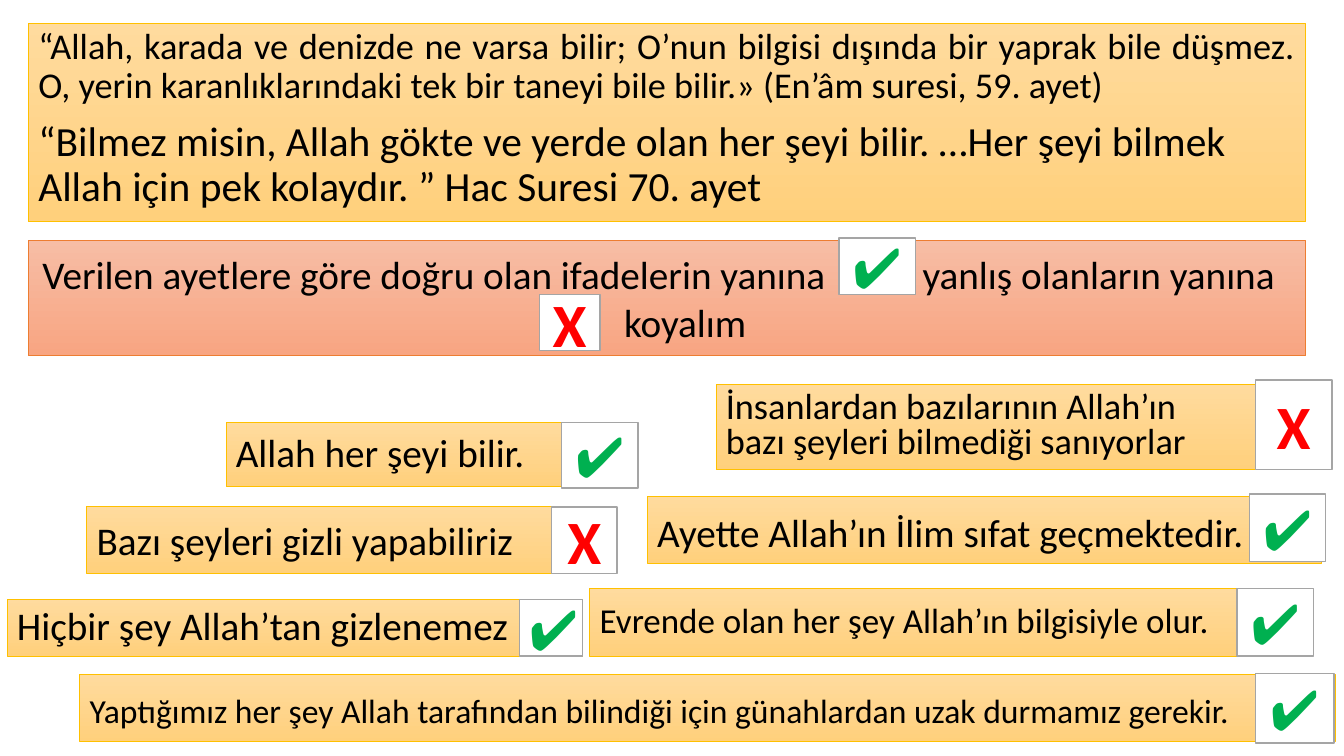
from dataclasses import dataclass

import pptx
import pptx.dml.color
import pptx.enum.shapes
import pptx.enum.text
import pptx.oxml.ns
import pptx.util
from lxml import etree

PX = 9144  # 100 px to the inch

RGB = pptx.dml.color.RGBColor
ALIGN = pptx.enum.text.PP_ALIGN
BLACK = RGB(0x00, 0x00, 0x00)
WHITE = RGB(0xFF, 0xFF, 0xFF)
GREY = RGB(0xA5, 0xA5, 0xA5)
GREEN = RGB(0x00, 0xB0, 0x50)
RED = RGB(0xFF, 0x00, 0x00)
GOLD = RGB(0xFF, 0xC0, 0x00)
GOLD_LIGHT = RGB(0xFF, 0xDB, 0x9E)
GOLD_DEEP = RGB(0xFF, 0xD0, 0x7C)
ORANGE = RGB(0xED, 0x7D, 0x31)
ORANGE_LIGHT = RGB(0xF7, 0xBD, 0xA5)
ORANGE_DEEP = RGB(0xF8, 0xA5, 0x82)


@dataclass(frozen=True)
class Box:
    left: int
    top: int
    width: int
    height: int


@dataclass(frozen=True)
class Mark:
    box: Box
    correct: bool


@dataclass(frozen=True)
class Statement:
    box: Box
    text: str
    size: float
    spacing: float
    mark: Mark


STATEMENTS = [
    Statement(Box(224, 419, 405, 64), "Allah her şeyi bilir.", 28, 0.9,
              Mark(Box(557, 419, 76, 65), True)),
    Statement(Box(710, 381, 608, 85),
              "İnsanlardan bazılarının Allah’ın\vbazı şeyleri bilmediği sanıyorlar", 25.9, 0.8,
              Mark(Box(1245, 377, 76, 89), False)),
    Statement(Box(7, 595, 571, 56), "Hiçbir şey Allah’tan gizlenemez", 28, 0.9,
              Mark(Box(515, 595, 63, 56), True)),
    Statement(Box(86, 502, 465, 67), "Bazı şeyleri gizli yapabiliriz", 28, 1.0,
              Mark(Box(547, 503, 65, 66), False)),
    Statement(Box(642, 492, 669, 67), "Ayette Allah’ın İlim sıfat geçmektedir.", 28, 1.1,
              Mark(Box(1239, 490, 76, 67), True)),
    Statement(Box(585, 584, 710, 67), "Evrende olan her şey Allah’ın bilgisiyle olur.", 25, 0.9,
              Mark(Box(1227, 584, 76, 67), True)),
    Statement(Box(79, 669, 1245, 67),
              "Yaptığımız her şey Allah tarafından bilindiği için günahlardan uzak durmamız gerekir.",
              24, 1.1, Mark(Box(1245, 668, 78, 69), True)),
]
INSTRUCTION_MARKS = [
    Mark(Box(832, 236, 76, 56), True),
    Mark(Box(535, 292, 60, 56), False),
]


def place(shape, box: Box) -> None:
    shape.left, shape.top = box.left * PX, box.top * PX
    shape.width, shape.height = box.width * PX, box.height * PX


def shade(shape, light: RGB, deep: RGB, outline: RGB) -> None:
    """Fill from light at the top to deep at the bottom, with a thin outline."""
    shape.fill.gradient()
    shape.fill.gradient_angle = 270
    for stop, color in zip(shape.fill.gradient_stops, (light, deep)):
        stop.color.rgb = color
    shape.line.color.rgb = outline
    shape.line.width = pptx.util.Pt(0.5)


def write(paragraph, text: str, size: float, color: RGB = BLACK, bold: bool = False,
          align: ALIGN = ALIGN.LEFT, spacing: float = 1.0, before: int = 0) -> None:
    paragraph.text = text
    paragraph.alignment = align
    paragraph.line_spacing = spacing
    paragraph.space_before = pptx.util.Pt(before)
    paragraph.font.name = "Calibri"
    paragraph.font.size = pptx.util.Pt(size)
    paragraph.font.bold = bold
    paragraph.font.color.rgb = color


def indent(paragraph, margin: int = 0) -> None:
    """Drop the bullet and set the left margin."""
    qn = pptx.oxml.ns.qn
    properties = paragraph.font._element.getparent()
    properties.set("marL", str(margin * PX))
    properties.set("indent", "0")
    properties.find(qn("a:defRPr")).addprevious(etree.Element(qn("a:buNone")))


def add_rectangle(slide, box: Box):
    rectangle = slide.shapes.add_shape(
        pptx.enum.shapes.MSO_SHAPE.RECTANGLE,
        box.left * PX, box.top * PX, box.width * PX, box.height * PX)
    rectangle.shadow.inherit = False
    rectangle.text_frame.word_wrap = True
    rectangle.text_frame.vertical_anchor = pptx.enum.text.MSO_ANCHOR.MIDDLE
    return rectangle


def add_mark(slide, mark: Mark) -> None:
    square = add_rectangle(slide, mark.box)
    square.fill.solid()
    square.fill.fore_color.rgb = WHITE
    square.line.color.rgb = GREY
    square.line.width = pptx.util.Pt(1)
    symbol, size, color = ("✔", 40, GREEN) if mark.correct else ("X", 44, RED)
    write(square.text_frame.paragraphs[0], symbol, size, color,
          bold=not mark.correct, align=ALIGN.CENTER)


def add_statement(slide, statement: Statement) -> None:
    panel = add_rectangle(slide, statement.box)
    shade(panel, GOLD_LIGHT, GOLD_DEEP, GOLD)
    write(panel.text_frame.paragraphs[0], statement.text, statement.size,
          spacing=statement.spacing, before=10)
    add_mark(slide, statement.mark)


def fill_verses(verses) -> None:
    place(verses, Box(28, 23, 1267, 197))
    shade(verses, GOLD_LIGHT, GOLD_DEEP, GOLD)
    frame = verses.text_frame
    frame.auto_size = pptx.enum.text.MSO_AUTO_SIZE.NONE
    first, second = frame.paragraphs[0], frame.add_paragraph()
    write(first, "“Allah, karada ve denizde ne varsa bilir; O’nun bilgisi dışında bir yaprak "
          "bile düşmez. O, yerin karanlıklarındaki tek bir taneyi bile bilir.» "
          "(En’âm suresi, 59. ayet)", 25.9, align=ALIGN.JUSTIFY, spacing=0.9, before=10)
    write(second, "“Bilmez misin, Allah gökte ve yerde olan her şeyi bilir. …Her şeyi bilmek "
          "Allah için pek kolaydır. ” Hac Suresi 70. ayet", 29.6, spacing=0.9, before=10)
    for verse in (first, second):
        indent(verse)


def fill_instruction(instruction) -> None:
    place(instruction, Box(28, 238, 1267, 115))
    shade(instruction, ORANGE_LIGHT, ORANGE_DEEP, ORANGE)
    frame = instruction.text_frame
    frame.auto_size = pptx.enum.text.MSO_AUTO_SIZE.NONE
    frame.vertical_anchor = pptx.enum.text.MSO_ANCHOR.MIDDLE
    frame.margin_left = 14 * PX
    first, second = frame.paragraphs[0], frame.add_paragraph()
    write(first, "Verilen ayetlere göre doğru olan ifadelerin yanına", 28)
    write(second, "koyalım", 28)
    indent(second, margin=577)


def add_wrong_clause(slide) -> None:
    """Continue the instruction's first line to the right of its check mark."""
    clause = slide.shapes.add_textbox(0, 0, 0, 0)
    place(clause, Box(915, 248, 375, 48))
    frame = clause.text_frame
    frame.word_wrap = True
    frame.margin_left = frame.margin_right = frame.margin_top = frame.margin_bottom = 0
    write(frame.paragraphs[0], "yanlış olanların yanına", 28)


def main() -> None:
    presentation = pptx.Presentation()
    presentation.slide_width, presentation.slide_height = 1333 * PX, 750 * PX
    slide = presentation.slides.add_slide(presentation.slide_layouts[1])
    fill_verses(slide.placeholders[1])
    fill_instruction(slide.shapes.title)
    add_wrong_clause(slide)
    for statement in STATEMENTS:
        add_statement(slide, statement)
    for mark in INSTRUCTION_MARKS:
        add_mark(slide, mark)
    presentation.save("out.pptx")


if __name__ == "__main__":
    main()
